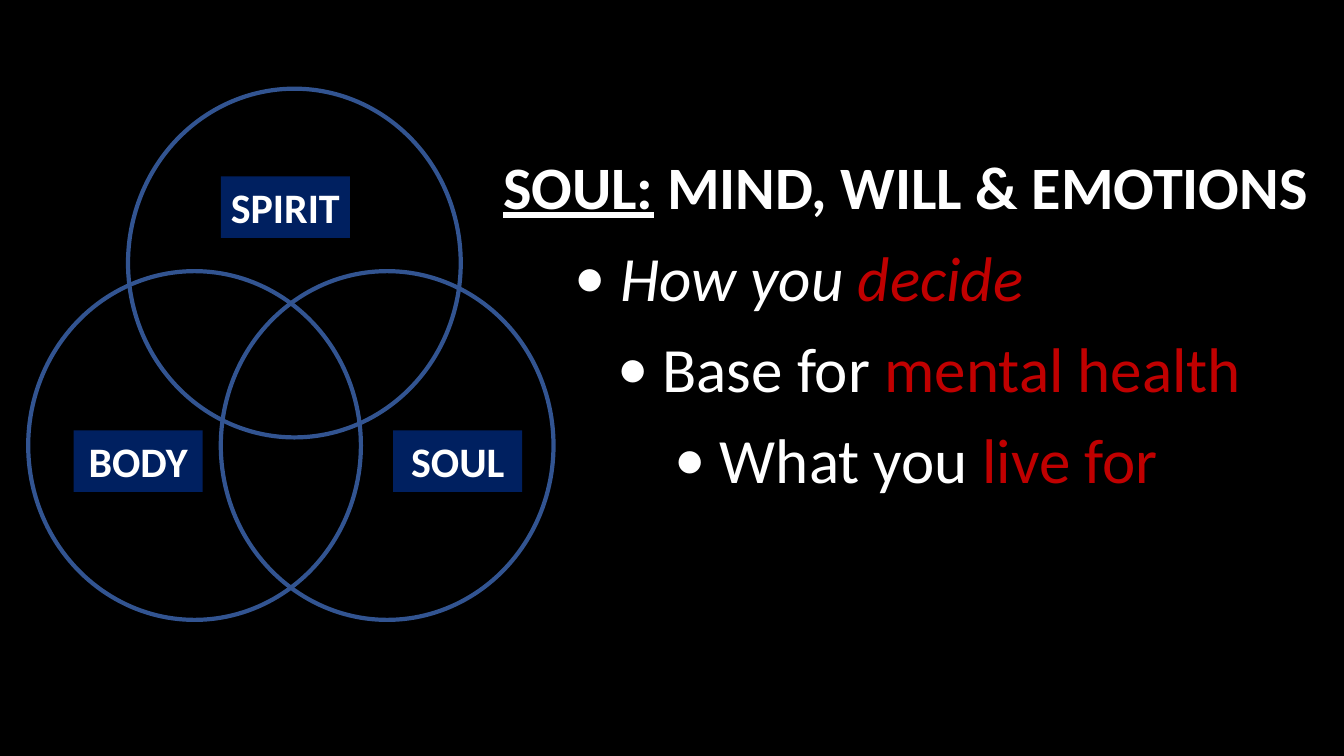
from dataclasses import dataclass

from lxml import etree
from pptx import Presentation
from pptx import util as u
from pptx.dml.color import RGBColor
from pptx.enum import shapes, text
from pptx.oxml.ns import qn

PX = 9144  # EMU in one px, 100 px to the inch


@dataclass(frozen=True)
class Theme:
    font: str = "Calibri"
    back: str = "000000"
    ink: str = "FFFFFF"
    accent: str = "C00000"
    ring: str = "325491"
    label: str = "002060"
    head: int = 43
    body: int = 45
    tag: int = 30


THEME = Theme()


def px(n):
    return u.Emu(n * PX)


def rgb(code):
    return RGBColor.from_string(code)


def write(para, words, size, color=THEME.ink, bold=False, italic=False, under=False):
    """Add one formatted run to a paragraph."""
    run = para.add_run()
    run.text = words
    font = run.font
    font.name, font.size = THEME.font, u.Pt(size)
    font.bold, font.italic, font.underline = bold, italic, under
    font.color.rgb = rgb(color)


def place(holder, left, top, width, height):
    """Move a placeholder and return its text frame, set from the top."""
    holder.left, holder.top = px(left), px(top)
    holder.width, holder.height = px(width), px(height)
    frame = holder.text_frame
    frame.word_wrap = True
    frame.auto_size = text.MSO_AUTO_SIZE.NONE
    frame.vertical_anchor = text.MSO_ANCHOR.TOP
    return frame


def bullet(para, left, hang):
    """Give a paragraph a hanging bullet."""
    props = para._p.get_or_add_pPr()
    props.set("marL", str(px(left + hang)))
    props.set("indent", str(px(-hang)))
    color = etree.SubElement(props, qn("a:buClr"))
    etree.SubElement(color, qn("a:srgbClr"), val=THEME.ink)
    etree.SubElement(props, qn("a:buFont"), typeface=THEME.font)
    etree.SubElement(props, qn("a:buChar"), char="•")


def ring(group, left, top):
    """Draw one open circle of the diagram."""
    shape = group.shapes.add_shape(
        shapes.MSO_SHAPE.OVAL, px(left), px(top), px(330), px(346))
    shape.shadow.inherit = False
    shape.fill.background()
    shape.line.color.rgb = rgb(THEME.ring)
    shape.line.width = u.Pt(3)


def label(group, left, top, words):
    """Draw one filled name tag."""
    shape = group.shapes.add_shape(
        shapes.MSO_SHAPE.RECTANGLE, px(left), px(top), px(128), px(61))
    shape.shadow.inherit = False
    shape.fill.solid()
    shape.fill.fore_color.rgb = rgb(THEME.label)
    shape.line.fill.background()
    frame = shape.text_frame
    frame.word_wrap = False
    frame.vertical_anchor = text.MSO_ANCHOR.MIDDLE
    para = frame.paragraphs[0]
    para.alignment = text.PP_ALIGN.CENTER
    write(para, words, THEME.tag, bold=True)


def main():
    deck = Presentation()
    deck.slide_width, deck.slide_height = px(1333), px(750)
    slide = deck.slides.add_slide(deck.slide_layouts[1])
    slide.background.fill.solid()
    slide.background.fill.fore_color.rgb = rgb(THEME.back)

    # Heading
    para = place(slide.shapes.title, 489, 143, 844, 83).paragraphs[0]
    para.alignment = text.PP_ALIGN.LEFT
    write(para, "SOUL:", THEME.head, bold=True, under=True)
    write(para, " MIND, WILL & EMOTIONS", THEME.head, bold=True)

    # Stepped list: indent, plain words, accented words, italic
    points = [
        (71, "How you ", "decide", True),
        (113, "Base for ", "mental health", False),
        (170, "What you ", "live for", False),
    ]
    frame = place(slide.placeholders[1], 489, 232, 844, 273)
    for i, (left, plain, strong, slant) in enumerate(points):
        para = frame.add_paragraph() if i else frame.paragraphs[0]
        para.space_before, para.space_after = u.Pt(0), u.Pt(11)
        bullet(para, left, 45)
        write(para, plain, THEME.body, italic=slant)
        write(para, strong, THEME.body, THEME.accent, italic=slant)

    # Three overlapping circles, then their names
    venn = slide.shapes.add_group_shape()
    for left, top in [(28, 269), (219, 269), (127, 88)]:
        ring(venn, left, top)
    for left, top, words in [(390, 427, "SOUL"), (219, 175, "SPIRIT"), (73, 427, "BODY")]:
        label(venn, left, top, words)

    deck.save("out.pptx")


if __name__ == "__main__":
    main()
